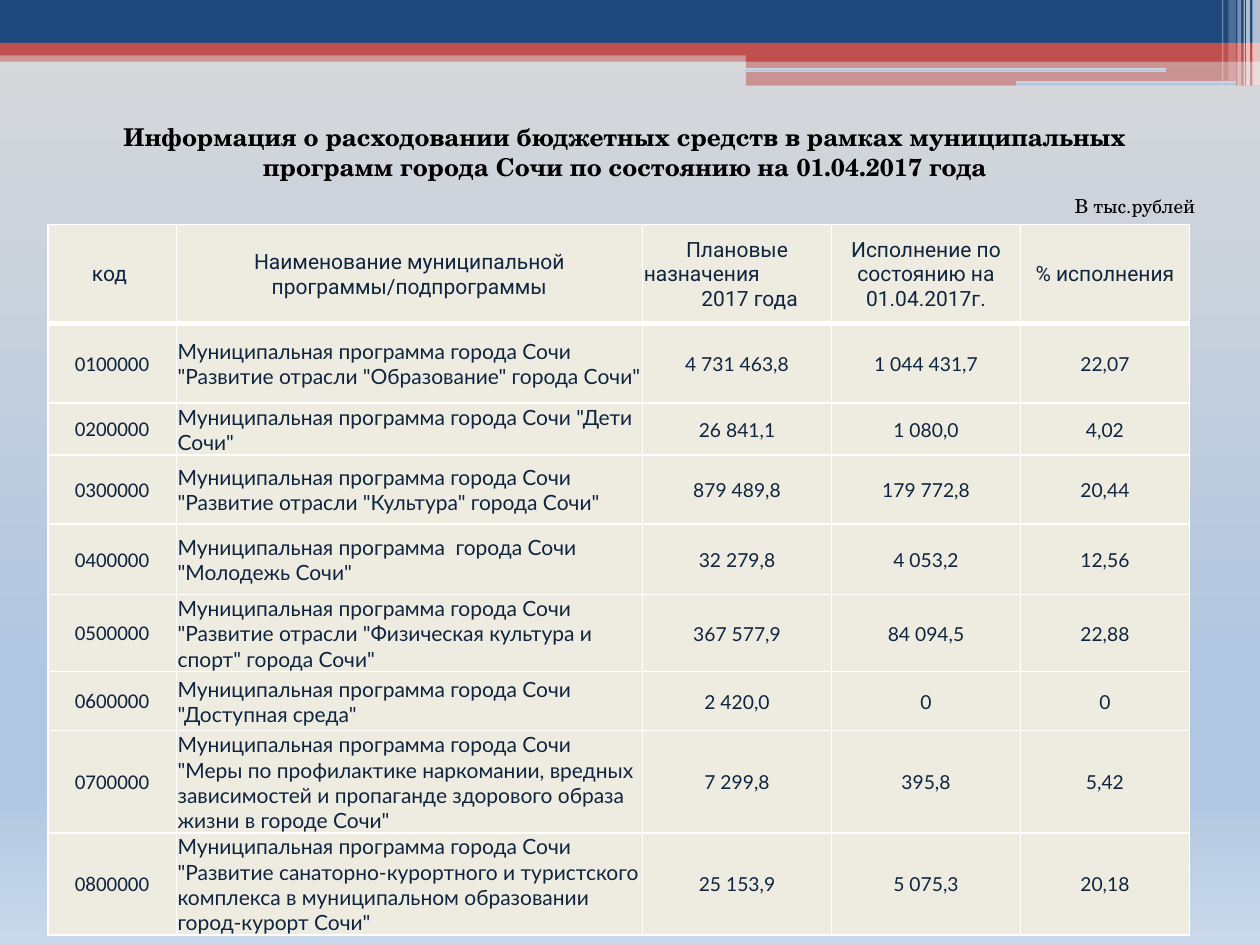
from dataclasses import dataclass

from lxml.etree import SubElement as Sub
from pptx import Presentation
from pptx.dml.color import RGBColor as Rgb
from pptx.enum.shapes import MSO_SHAPE as Kind
from pptx.enum.text import MSO_ANCHOR as Anchor, MSO_AUTO_SIZE as Fit, PP_ALIGN as Align
from pptx.oxml import parse_xml
from pptx.oxml.ns import nsdecls, qn
from pptx.util import Inches, Pt


@dataclass(frozen=True)
class Theme:
    navy: str = "1F497D"
    red: str = "C0504D"
    white: str = "FFFFFF"
    cream: str = "EEECE1"
    ink: str = "0F243E"
    black: str = "000000"
    fade: tuple = ((0, "D9D9D9"), (74, "B0C6E1"), (83, "B0C6E1"), (100, "CAD9EB"))
    serif: str = "TeX Gyre Schola"
    head: str = "Roboto"
    code: str = "Calibri"
    body: str = "Lato"
    title: int = 14
    text: int = 12
    small: int = 11


def put(frame, text, font, size, color, bold=False, align=Align.LEFT, first=True):
    """Write one paragraph into a text frame."""
    para = frame.paragraphs[0] if first else frame.add_paragraph()
    para.alignment = align
    run = para.add_run()
    run.text = text
    run.font.name, run.font.size, run.font.bold = font, Pt(size), bold
    run.font.color.rgb = Rgb.from_string(color)
    return para


def blend(fill, owner, stops):
    """Give a fill a top-to-bottom gradient with any number of stops."""
    fill.gradient()
    fill.gradient_angle = 270
    group = owner.find(".//" + qn("a:gsLst"))
    for old in list(group):
        group.remove(old)
    for pos, color in stops:
        stop = Sub(group, qn("a:gs"), pos=str(pos * 1000))
        Sub(stop, qn("a:srgbClr"), val=color)


def edge(cell, color, **widths):
    """Draw cell borders; widths are points keyed by side L, R, T, B."""
    props = cell._tc.get_or_add_tcPr()
    for spot, (side, width) in enumerate(widths.items()):
        props.insert(spot, parse_xml(
            f'<a:ln{side} {nsdecls("a")} w="{Pt(width)}"><a:solidFill>'
            f'<a:srgbClr val="{color}"/></a:solidFill></a:ln{side}>'))


class Deck:
    def __init__(self, theme):
        self.theme = theme
        self.file = Presentation()
        self.file.slide_width, self.file.slide_height = Inches(10), Inches(7.5)
        self.slide = self.file.slides.add_slide(self.file.slide_layouts[6])
        blend(self.slide.background.fill, self.slide.element, theme.fade)

    def bar(self, box, color=None, alpha=100):
        """Add a plain bar, or a rounded one in the page gradient if no colour is given."""
        kind = Kind.RECTANGLE if color else Kind.ROUNDED_RECTANGLE
        shape = self.slide.shapes.add_shape(kind, *map(Inches, box))
        shape.shadow.inherit = False
        shape.line.fill.background()
        if not color:
            blend(shape.fill, shape.element, self.theme.fade)
            return
        shape.fill.solid()
        shape.fill.fore_color.rgb = Rgb.from_string(color)
        if alpha < 100:
            tint = shape.element.spPr.find(".//" + qn("a:srgbClr"))
            Sub(tint, qn("a:alpha"), val=str(alpha * 1000))

    def label(self, box, text, **form):
        frame = self.slide.shapes.add_textbox(*map(Inches, box)).text_frame
        frame.word_wrap = True
        frame.auto_size = Fit.SHAPE_TO_FIT_TEXT
        put(frame, text, self.theme.serif, color=self.theme.black, **form)

    def cell(self, cell, row):
        """Set the fill, margins and borders of a table cell."""
        cell.fill.solid()
        cell.fill.fore_color.rgb = Rgb.from_string(self.theme.cream)
        cell.vertical_anchor = Anchor.MIDDLE
        cell.margin_left = cell.margin_right = cell.margin_top = Inches(0.01)
        cell.margin_bottom = 0
        edge(cell, self.theme.white, L=1, R=1, T=3 if row == 1 else 1, B=3 if row == 0 else 1)

    def table(self, box, cols, rows, heads, data):
        t = self.theme
        grid = self.slide.shapes.add_table(len(rows), len(cols), *map(Inches, box)).table
        for col, width in zip(grid.columns, cols):
            col.width = Inches(width)
        for row, height in zip(grid.rows, rows):
            row.height = Inches(height)
        forms = [(t.code, t.text, Align.CENTER), (t.body, t.text, Align.LEFT)]
        forms += [(t.body, t.small, Align.CENTER)] * 3
        for c, lines in enumerate(heads):
            cell = grid.cell(0, c)
            self.cell(cell, 0)
            for n, (text, align, shift) in enumerate(lines):
                para = put(cell.text_frame, text, t.head, t.text, t.ink, align=align, first=n == 0)
                if shift:
                    para._p.get_or_add_pPr().set("marL", str(Inches(shift)))
        for r, line in enumerate(data, 1):
            for c, (text, (font, size, align)) in enumerate(zip(line, forms)):
                cell = grid.cell(r, c)
                self.cell(cell, r)
                put(cell.text_frame, text, font, size, t.ink, align=align)


def mid(text, shift=0):
    return text, Align.CENTER, shift


HEADS = [
    [mid("код\u00a0")],
    [mid("Наименование муниципальной программы/подпрограммы")],
    [mid("Плановые"), ("назначения", Align.LEFT, 0), mid("2017 года", 0.2)],
    [mid("Исполнение по состоянию на 01.04.2017г.")],
    [mid("% исполнения")],
]
PLANS = [
    ('города Сочи "Развитие отрасли "Образование" города Сочи"',
     "4 731 463,8", "1 044 431,7", "22,07"),
    ('города Сочи "Дети Сочи"', "26 841,1", "1 080,0", "4,02"),
    ('города Сочи "Развитие отрасли "Культура" города Сочи"',
     "879 489,8", "179 772,8", "20,44"),
    (' города Сочи "Молодежь Сочи"', "32 279,8", "4 053,2", "12,56"),
    ('города Сочи "Развитие отрасли "Физическая культура и спорт" города Сочи"',
     "367 577,9", "84 094,5", "22,88"),
    ('города Сочи "Доступная среда"', "2 420,0", "0", "0"),
    ('города Сочи "Меры по профилактике наркомании, вредных зависимостей '
     'и пропаганде здорового образа жизни в городе Сочи"', "7 299,8", "395,8", "5,42"),
    ('города Сочи "Развитие санаторно-курортного и туристского комплекса '
     'в муниципальном образовании город-курорт Сочи"', "25 153,9", "5 075,3", "20,18"),
]


def main():
    t = Theme()
    deck = Deck(t)
    deck.bar((0, 0.4, 10, 0.09), t.red, 50)
    deck.bar((0, 0, 10, 0.34), t.navy)
    deck.bar((0, 0.34, 10, 0.1), t.red)
    deck.bar((5.92, 0.39, 4.08, 0.1), t.red)
    deck.bar((5.92, 0.48, 4.08, 0.2), t.red, 50)
    deck.bar((5.91, 0.54, 3.35, 0.03))
    deck.bar((8.06, 0.64, 1.75, 0.04))
    stripes = [(9.94, 0.06, 0.68, 65), (9.89, 0.03, 0.68, 65), (9.87, 0.01, 0.68, 60),
               (9.82, 0.03, 0.68, 40), (9.75, 0.06, 0.64, 20), (9.7, 0.01, 0.64, 30)]
    for left, width, height, alpha in stripes:
        deck.bar((left, 0, width, height), t.white, alpha)

    data = [(f"0{n}00000", "Муниципальная программа " + name, *sums)
            for n, (name, *sums) in enumerate(PLANS, 1)]
    deck.table((0.38, 1.78, 9.06, 5.41), (1.02, 3.7, 1.5, 1.5, 1.34),
               (0.79, 0.63, 0.41, 0.55, 0.56, 0.56, 0.47, 0.65, 0.79), HEADS, data)
    deck.label((0.51, 0.92, 8.9, 0.57),
               "Информация о расходовании бюджетных средств в рамках муниципальных "
               "программ города Сочи по состоянию на 01.04.2017 года",
               size=t.title, bold=True, align=Align.CENTER)
    deck.label((8.43, 1.49, 1.57, 0.29), "В тыс.рублей", size=t.small)
    deck.file.save("out.pptx")


if __name__ == "__main__":
    main()
